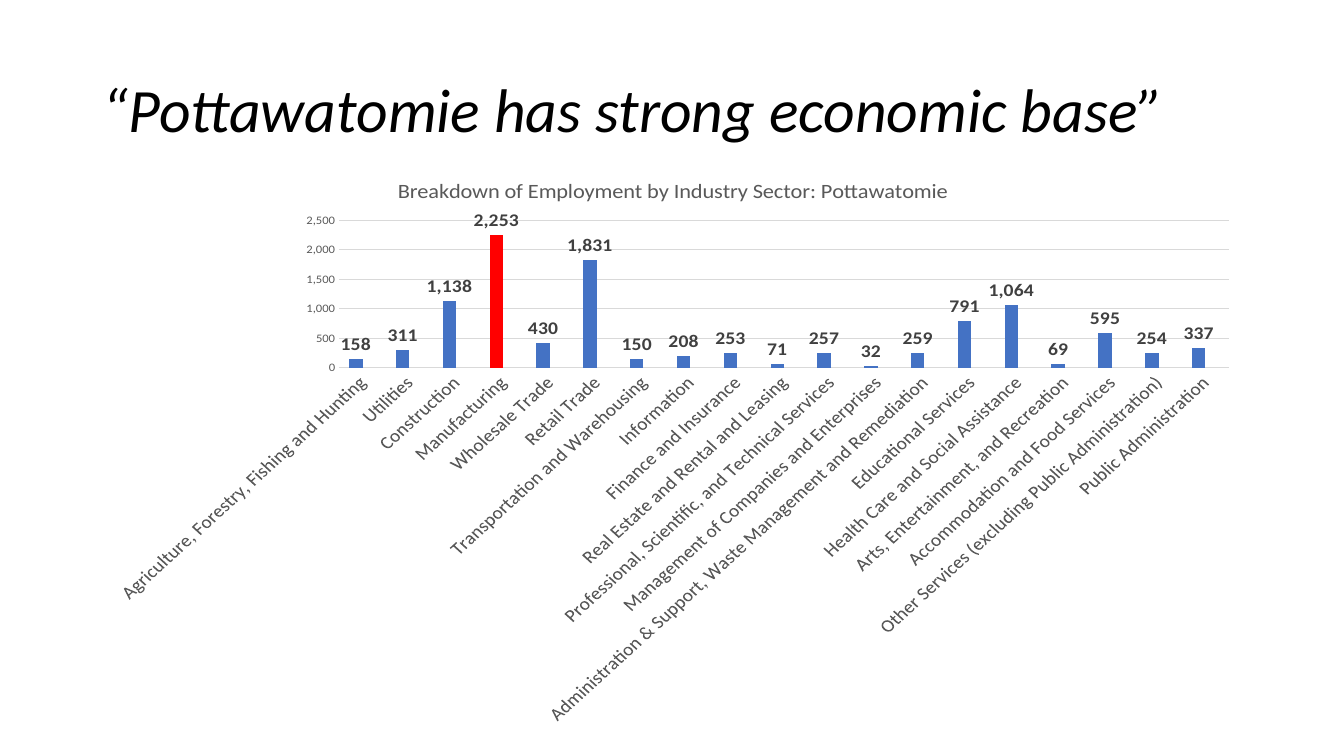
from collections import namedtuple
from dataclasses import dataclass

from pptx import Presentation
from pptx.chart.data import CategoryChartData
from pptx.dml.color import RGBColor
from pptx.enum.chart import XL_CHART_TYPE, XL_LABEL_POSITION, XL_TICK_MARK
from pptx.enum.text import MSO_ANCHOR
from pptx.oxml.ns import qn
from pptx.util import Pt

COLUMNS = XL_CHART_TYPE.COLUMN_CLUSTERED
OUTSIDE_END = XL_LABEL_POSITION.OUTSIDE_END
NO_TICK = XL_TICK_MARK.NONE
MIDDLE = MSO_ANCHOR.MIDDLE
EMU_PER_PX = 914400 / 100.8

Box = namedtuple("Box", "left top width height")


@dataclass(frozen=True)
class Theme:
    """Colours, font and type sizes of the slide."""
    font: str = "Calibri"
    ink: str = "000000"
    muted: str = "595959"
    label: str = "404040"
    grid: str = "D9D9D9"
    bar: str = "4472C4"
    highlight: str = "FF0000"
    second_bar: str = "ED7D31"
    headline_size: int = 44
    chart_title_size: int = 16
    sector_size: int = 14
    chart_size: int = 10
    scale_size: int = 9


THEME = Theme()
HEADLINE = "“Pottawatomie has strong economic base”"
CHART_TITLE = "Breakdown of Employment by Industry Sector: Pottawatomie"
HIGHLIGHTED_SECTOR = "Manufacturing"
EMPLOYMENT = {
    "Agriculture, Forestry, Fishing and Hunting": 158,
    "Utilities": 311,
    "Construction": 1138,
    "Manufacturing": 2253,
    "Wholesale Trade": 430,
    "Retail Trade": 1831,
    "Transportation and Warehousing": 150,
    "Information": 208,
    "Finance and Insurance": 253,
    "Real Estate and Rental and Leasing": 71,
    "Professional, Scientific, and Technical Services": 257,
    "Management of Companies and Enterprises": 32,
    "Administration & Support, Waste Management and Remediation": 259,
    "Educational Services": 791,
    "Health Care and Social Assistance": 1064,
    "Arts, Entertainment, and Recreation": 69,
    "Accommodation and Food Services": 595,
    "Other Services (excluding Public Administration)": 254,
    "Public Administration": 337,
}


def px(length):
    """Turn pixels into EMU."""
    return round(length * EMU_PER_PX)


def style_font(font, size, color, bold=False, italic=False):
    """Apply the theme font with a size, colour and emphasis."""
    font.name = THEME.font
    font.size = Pt(size)
    font.color.rgb = RGBColor.from_string(color)
    font.bold = bold
    font.italic = italic


def fill_solid(fill, color):
    """Fill with one colour."""
    fill.solid()
    fill.fore_color.rgb = RGBColor.from_string(color)


def add_headline(slide, box):
    """Place the italic headline in its box."""
    frame = slide.shapes.add_textbox(*map(px, box)).text_frame
    frame.word_wrap = True
    frame.vertical_anchor = MIDDLE
    paragraph = frame.paragraphs[0]
    paragraph.line_spacing = 0.9
    run = paragraph.add_run()
    run.text = HEADLINE
    style_font(run.font, THEME.headline_size, THEME.ink, italic=True)


def style_axis(axis, size):
    """Hide the axis line and ticks and set its label type."""
    axis.major_tick_mark = NO_TICK
    axis.minor_tick_mark = NO_TICK
    axis.format.line.fill.background()
    style_font(axis.tick_labels.font, size, THEME.muted)


def slant_sectors(chart):
    """Turn the sector names to rise at 45 degrees."""
    body = chart._chartSpace.find(
        ".//" + qn("c:catAx") + "/" + qn("c:txPr") + "/" + qn("a:bodyPr"))
    body.set("rot", str(-45 * 60000))
    body.set("vert", "horz")


def style_series(plot):
    """Colour the bars, mark one sector and show the values."""
    employment, empty = plot.series
    for series, color in ((employment, THEME.bar), (empty, THEME.second_bar)):
        fill_solid(series.format.fill, color)
        series.invert_if_negative = False
    marked = employment.points[list(EMPLOYMENT).index(HIGHLIGHTED_SECTOR)]
    fill_solid(marked.format.fill, THEME.highlight)
    labels = employment.data_labels
    labels.show_value = True
    labels.position = OUTSIDE_END
    labels.number_format = "#,##0"
    labels.number_format_is_linked = False
    style_font(labels.font, THEME.sector_size, THEME.label, bold=True)


def add_employment_chart(slide, box):
    """Place the employment column chart in its box."""
    data = CategoryChartData(number_format="#,##0")
    data.categories = list(EMPLOYMENT)
    data.add_series("Series 1", EMPLOYMENT.values())
    data.add_series("Series 2", [None] * len(EMPLOYMENT))
    chart = slide.shapes.add_chart(COLUMNS, *map(px, box), data).chart
    style_font(chart.font, THEME.chart_size, THEME.ink)
    chart.has_legend = False

    chart.has_title = True
    title = chart.chart_title.text_frame.paragraphs[0].add_run()
    title.text = CHART_TITLE
    style_font(title.font, THEME.chart_title_size, THEME.muted)
    chart.chart_title.include_in_layout = False

    sectors, jobs = chart.category_axis, chart.value_axis
    style_axis(sectors, THEME.sector_size)
    style_axis(jobs, THEME.scale_size)
    slant_sectors(chart)
    jobs.minimum_scale, jobs.maximum_scale, jobs.major_unit = 0, 2500, 500
    jobs.tick_labels.number_format = "#,##0"
    jobs.tick_labels.number_format_is_linked = False
    grid = jobs.major_gridlines.format.line
    grid.width = Pt(0.75)
    grid.color.rgb = RGBColor.from_string(THEME.grid)

    plot = chart.plots[0]
    plot.gap_width = 150
    plot.vary_by_categories = False
    style_series(plot)


def main():
    """Build and save the slide."""
    deck = Presentation()
    deck.slide_width, deck.slide_height = px(1344), px(756)
    slide = deck.slides.add_slide(deck.slide_layouts[6])
    add_headline(slide, Box(93, 40, 1159, 146))
    add_employment_chart(slide, Box(93, 158, 1159, 567))
    deck.save("out.pptx")


if __name__ == "__main__":
    main()
